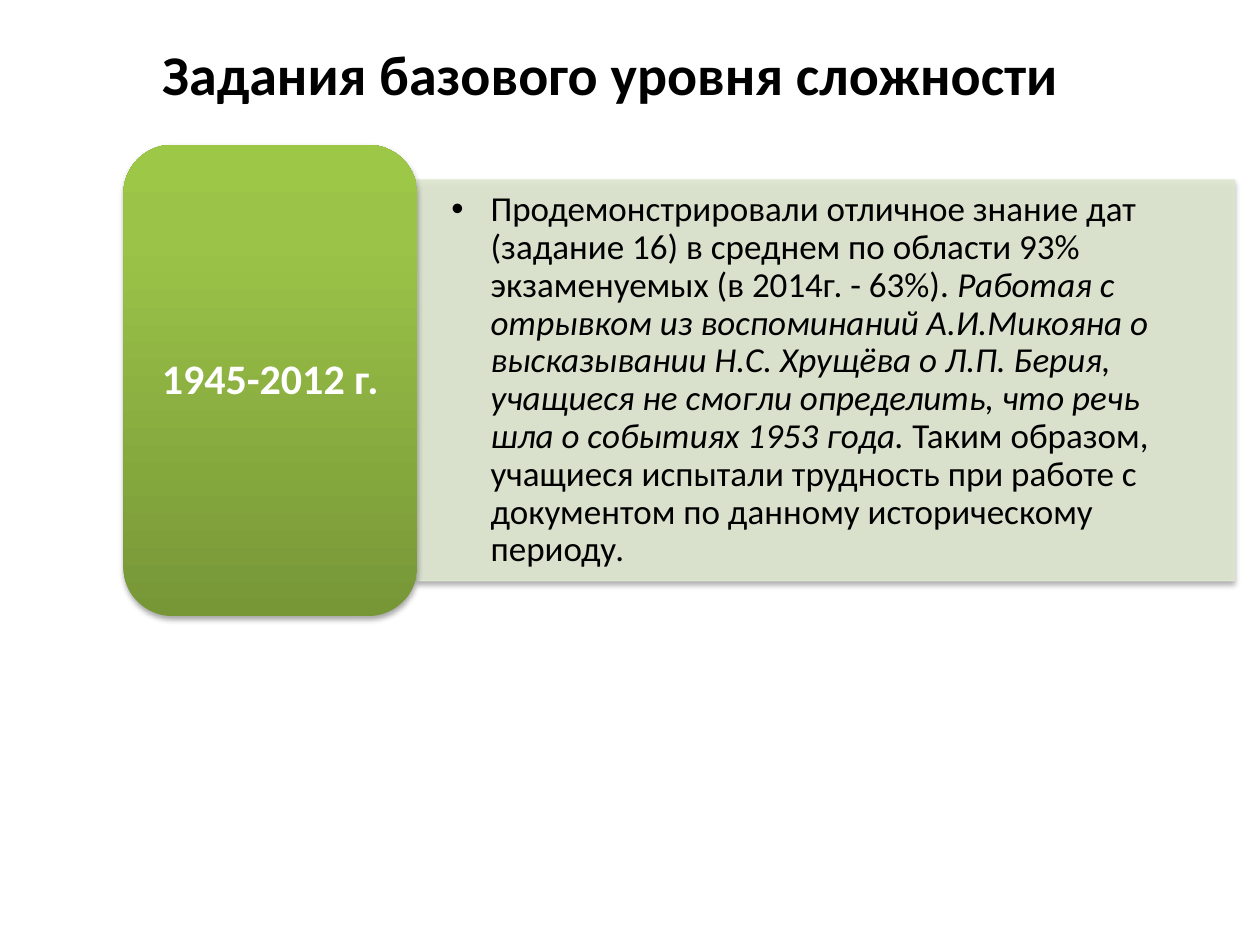
from lxml.etree import SubElement
from pptx import Presentation
from pptx.dml.color import RGBColor
from pptx.enum.shapes import MSO_SHAPE
from pptx.enum.text import MSO_ANCHOR, MSO_AUTO_SIZE, PP_ALIGN
from pptx.oxml.ns import qn
from pptx.util import Cm, Pt

BLACK = RGBColor(0x00, 0x00, 0x00)
WHITE = RGBColor(0xFF, 0xFF, 0xFF)
PALE_GREEN = RGBColor(0xDE, 0xE7, 0xD1)
DARK_GREEN = RGBColor(0x77, 0x97, 0x37)
MID_GREEN = RGBColor(0x9B, 0xC3, 0x48)
LIGHT_GREEN = RGBColor(0x9D, 0xC7, 0x46)

TITLE = "Задания базового уровня сложности"
PERIOD = "1945-2012 г."
FINDINGS = [
    ("Продемонстрировали отличное знание дат (задание 16) в среднем по области "
     "93% экзаменуемых (в 2014г. - 63%). ", False),
    ("Работая с отрывком из воспоминаний А.И.Микояна о высказывании "
     "Н.С. Хрущёва о Л.П. Берия, учащиеся не смогли определить, что речь шла "
     "о событиях 1953 года. ", True),
    ("Таким образом, учащиеся испытали трудность при работе с документом "
     "по данному историческому периоду.", False),
]


def place(shape, left, top, width, height):
    shape.left, shape.top = Cm(left), Cm(top)
    shape.width, shape.height = Cm(width), Cm(height)


def set_frame(shape, side, end):
    """Centre the text vertically, with side and top/bottom margins in cm."""
    frame = shape.text_frame
    frame.word_wrap = True
    frame.auto_size = MSO_AUTO_SIZE.NONE
    frame.vertical_anchor = MSO_ANCHOR.MIDDLE
    frame.margin_left = frame.margin_right = Cm(side)
    frame.margin_top = frame.margin_bottom = Cm(end)
    return frame.paragraphs[0]


def set_font(para, size, color, bold=False):
    font = para.font
    font.name, font.size, font.bold = "Calibri", Pt(size), bold
    font.color.rgb = color


def add_alpha(parent, percent):
    for color in parent.iter(qn("a:srgbClr")):
        SubElement(color, qn("a:alpha"), val=str(percent * 1000))


def add_soft_shadow(shape):
    shape.shadow.inherit = False
    effects = shape._element.spPr.find(qn("a:effectLst"))
    shadow = SubElement(effects, qn("a:outerShdw"), blurRad=str(Pt(3.1)),
                        dist=str(Pt(1.8)), dir="5400000", rotWithShape="0")
    SubElement(shadow, qn("a:srgbClr"), val=str(BLACK))
    add_alpha(shadow, 35)


def fill_upward_gradient(shape, stops):
    """Fill from bottom to top with (percent, colour) stops."""
    shape.fill.gradient()
    shape.fill.gradient_angle = 90
    stop_list = shape._element.spPr.find(qn("a:gradFill")).find(qn("a:gsLst"))
    stop_list.clear()
    for percent, color in stops:
        stop = SubElement(stop_list, qn("a:gs"), pos=str(percent * 1000))
        SubElement(stop, qn("a:srgbClr"), val=str(color))


def write_title(title):
    place(title, 3.02, 0.33, 22.43, 2.29)
    para = set_frame(title, 0.25, 0.13)
    para.text = TITLE
    para.alignment = PP_ALIGN.LEFT
    set_font(para, 32, BLACK, bold=True)


def write_findings(panel):
    place(panel, 8.41, 3.63, 16.48, 8.08)
    panel.fill.solid()
    panel.fill.fore_color.rgb = PALE_GREEN
    panel.line.color.rgb = PALE_GREEN
    panel.line.width = Pt(0.75)
    add_alpha(panel._element.spPr, 90)
    add_soft_shadow(panel)

    para = set_frame(panel, 0.69, 0.36)
    properties = para._p.get_or_add_pPr()
    properties.set("marL", str(Cm(0.79)))
    properties.set("indent", str(Cm(-0.79)))
    SubElement(properties, qn("a:buChar"), char="•")
    para.line_spacing = 0.9
    para.space_before = Pt(0)
    set_font(para, 20, BLACK)
    for text, italic in FINDINGS:
        span = para.add_run()
        span.text = text
        span.font.italic = italic


def add_period_label(page):
    label = page.shapes.add_shape(MSO_SHAPE.ROUNDED_RECTANGLE,
                                  Cm(2.49), Cm(2.92), Cm(5.92), Cm(9.5))
    fill_upward_gradient(label, [(0, DARK_GREEN), (80, MID_GREEN),
                                 (100, LIGHT_GREEN)])
    label.line.fill.background()
    add_soft_shadow(label)
    para = set_frame(label, 0, 0)
    para.text = PERIOD
    para.alignment = PP_ALIGN.CENTER
    para.line_spacing = 0.9
    set_font(para, 24, WHITE, bold=True)


def main():
    deck = Presentation()
    deck.slide_width, deck.slide_height = Cm(25.4), Cm(19.05)
    page = deck.slides.add_slide(deck.slide_layouts[1])
    write_title(page.shapes.title)
    write_findings(page.placeholders[1])
    add_period_label(page)
    deck.save("out.pptx")


if __name__ == "__main__":
    main()
